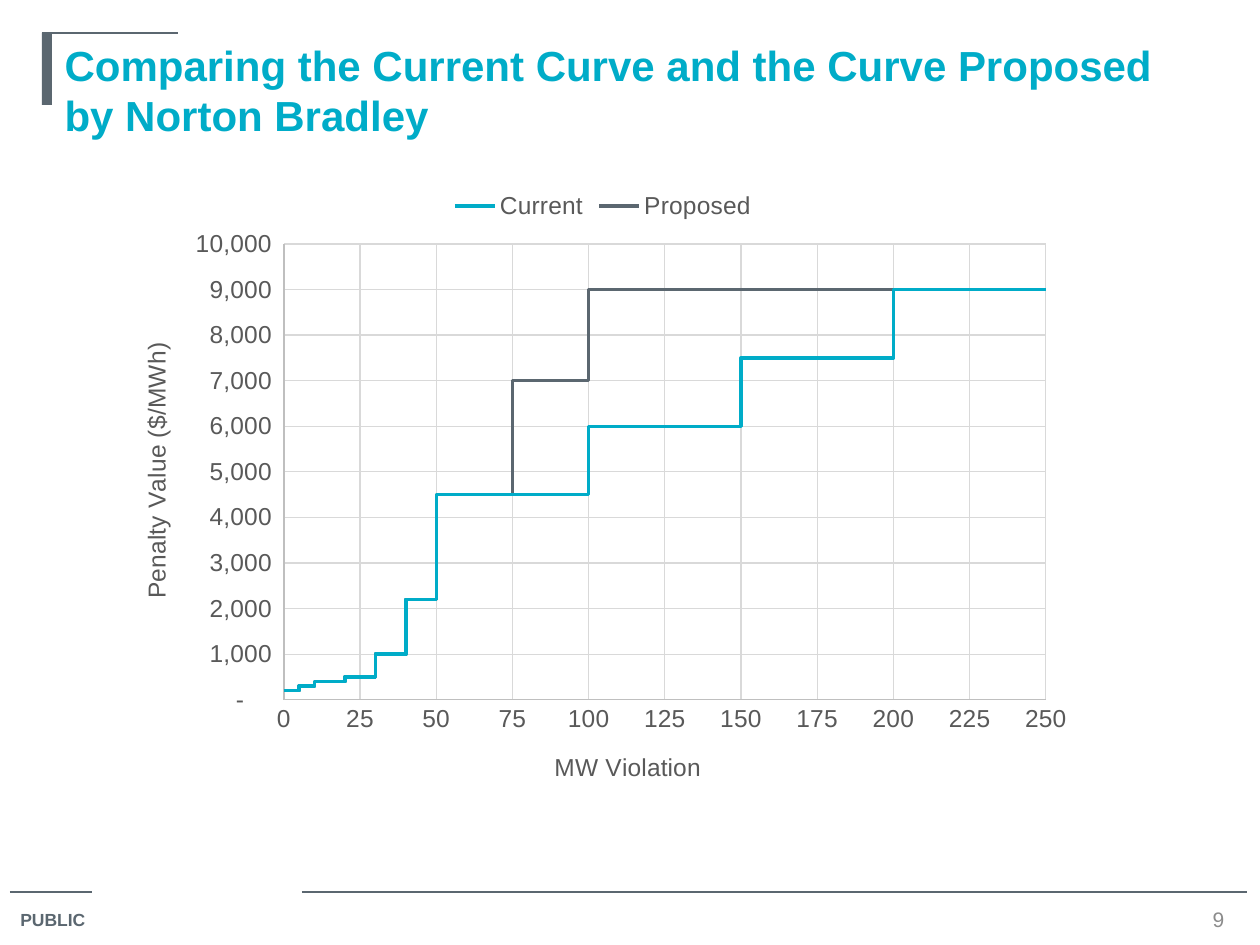
import lxml.etree
import pptx
import pptx.chart.data
import pptx.dml.color
import pptx.enum.chart
import pptx.enum.shapes
import pptx.enum.text
import pptx.oxml
import pptx.oxml.ns
import pptx.util

PX = 914400 / 126
FONT = "Arial"
COLORS = {"teal": "00ACC8", "slate": "5B6770", "number": "8C8C8C",
          "label": "595959", "axis": "BFBFBF", "grid": "D9D9D9"}
# Penalty values in $/MWh, one for each step between two MW violations
MW_BREAKS = [0, 5, 10, 20, 30, 40, 50, 75, 100, 150, 200, 500]
SHARED_STEPS = [200, 300, 400, 500, 1000, 2200, 4500]
CURVES = [
    ("Current", "teal", SHARED_STEPS + [4500, 6000, 7500, 9000]),
    ("Proposed", "slate", SHARED_STEPS + [7000, 9000, 9000, 9000]),
]


def px(n):
    return pptx.util.Emu(round(n * PX))


def rgb(name):
    return pptx.dml.color.RGBColor.from_string(COLORS[name])


def set_font(font, size, color, bold=False):
    font.name, font.size, font.bold = FONT, pptx.util.Pt(size), bold
    font.color.rgb = rgb(color)


def set_line(line, color, width=0.75):
    line.color.rgb = rgb(color)
    line.width = pptx.util.Pt(width)


def add_rule(s, x1, x2, y):
    rule = s.shapes.add_connector(
        pptx.enum.shapes.MSO_CONNECTOR.STRAIGHT, px(x1), px(y), px(x2), px(y))
    set_line(rule.line, "slate")
    lxml.etree.SubElement(rule._element.spPr, pptx.oxml.ns.qn("a:effectLst"))


def add_label(s, box, text, size, color, align, bold=False):
    tf = s.shapes.add_textbox(*map(px, box)).text_frame
    tf.word_wrap = True
    tf.vertical_anchor = pptx.enum.text.MSO_ANCHOR.MIDDLE
    p = tf.paragraphs[0]
    p.text, p.alignment = text, align
    set_font(p.font, size, color, bold)


def add_header(s, x, y, w, h, text):
    # Corner mark
    bar = s.shapes.add_shape(pptx.enum.shapes.MSO_SHAPE.RECTANGLE,
                             px(x), px(y), px(10), px(72))
    bar.shadow.inherit = False
    bar.fill.solid()
    bar.fill.fore_color.rgb = rgb("slate")
    bar.line.fill.background()
    add_rule(s, x, x + 136, y)

    # Title
    title = s.shapes.title
    title.left, title.top, title.width, title.height = map(px, (x + 10, y, w - 10, h))
    tf = title.text_frame
    tf.word_wrap = True
    tf.auto_size = pptx.enum.text.MSO_AUTO_SIZE.NONE
    tf.vertical_anchor = pptx.enum.text.MSO_ANCHOR.TOP
    p = tf.paragraphs[0]
    p.text, p.alignment = text, pptx.enum.text.PP_ALIGN.LEFT
    set_font(p.font, 24, "teal", bold=True)


def add_footer(s, x, y, w, label, number):
    add_rule(s, x, x + 82, y)
    add_rule(s, x + 292, x + w, y)
    add_label(s, (x - 2, y + 10, 97, 35), label, 10, "slate",
              pptx.enum.text.PP_ALIGN.LEFT, bold=True)
    add_label(s, (x + w - 60, y + 13, 63, 29), number, 12, "number",
              pptx.enum.text.PP_ALIGN.CENTER)


def stair_points(penalties):
    for start, end, penalty in zip(MW_BREAKS, MW_BREAKS[1:], penalties):
        yield start, penalty
        yield end, penalty


def set_layout(element, index, chart_size, position, size=None):
    """Place a chart part by px measured within the chart."""
    values = dict(zip("xywh", position + (size or ())))
    fractions = "".join(
        f'<c:{key} val="{value / chart_size[key in "yh"]:.4f}"/>'
        for key, value in values.items())
    target = '<c:layoutTarget val="inner"/>' if size else ""
    layout = pptx.oxml.parse_xml(
        f'<c:layout {pptx.oxml.ns.nsdecls("c")}><c:manualLayout>{target}'
        f'<c:xMode val="edge"/><c:yMode val="edge"/>{fractions}'
        '</c:manualLayout></c:layout>')
    for old in element.findall(pptx.oxml.ns.qn("c:layout")):
        element.remove(old)
    element.insert(index, layout)


def format_axis(axis, title, rotation, top, unit, number_format):
    axis.minimum_scale, axis.maximum_scale, axis.major_unit = 0, top, unit
    axis.has_major_gridlines = True
    set_line(axis.major_gridlines.format.line, "grid")
    set_line(axis.format.line, "axis")
    axis.major_tick_mark = axis.minor_tick_mark = pptx.enum.chart.XL_TICK_MARK.NONE
    axis.tick_labels.number_format = number_format
    axis.tick_labels.number_format_is_linked = False
    set_font(axis.tick_labels.font, 14, "label")

    tf = axis.axis_title.text_frame
    p = tf.paragraphs[0]
    p.text = title
    set_font(p.font, 14, "label")
    tf._txBody.bodyPr.set("rot", str(rotation * 60000))
    tf._txBody.bodyPr.set("vert", "horz")


def add_curve_chart(s, x, y, w, h):
    data = pptx.chart.data.XyChartData()
    for name, _, penalties in CURVES:
        series = data.add_series(name)
        for mw, penalty in stair_points(penalties):
            series.add_data_point(mw, penalty)
    chart = s.shapes.add_chart(
        pptx.enum.chart.XL_CHART_TYPE.XY_SCATTER_LINES_NO_MARKERS,
        px(x), px(y), px(w), px(h), data).chart
    set_font(chart.font, 14, "label")
    chart.has_title = False

    # Legend
    chart.has_legend = True
    chart.legend.position = pptx.enum.chart.XL_LEGEND_POSITION.TOP
    chart.legend.include_in_layout = False
    set_font(chart.legend.font, 14, "label")

    # Curves
    plot = chart.plots[0]
    plot.vary_by_categories = False
    for series, (_, color, _) in zip(plot.series, CURVES):
        series.smooth = False
        series.marker.style = pptx.enum.chart.XL_MARKER_STYLE.NONE
        set_line(series.format.line, color, 2)

    # Axes
    mw_axis, penalty_axis = chart.category_axis, chart.value_axis
    format_axis(mw_axis, "MW Violation", 0, 250, 25, "General")
    format_axis(penalty_axis, "Penalty Value ($/MWh)", -90, 10000, 1000,
                '_(* #,##0_);_(* \\(#,##0\\);_(* "-"??_);_(@_)')

    # Places within the chart
    set_layout(mw_axis.axis_title._element, 1, (w, h), (456, 569))
    set_layout(penalty_axis.axis_title._element, 1, (w, h), (42, 160))
    set_layout(chart._chartSpace.chart.plotArea, 0, (w, h), (190, 66), (762, 456))


def main():
    prs = pptx.Presentation()
    prs.slide_width, prs.slide_height = px(1260), px(945)
    s = prs.slides.add_slide(prs.slide_layouts[5])
    add_footer(s, 10, 892, 1237, "PUBLIC", "9")
    add_header(s, 42, 33, 1176, 158,
               "Comparing the Current Curve and the Curve Proposed by Norton Bradley")
    add_curve_chart(s, 94, 178, 1018, 650)
    prs.save("out.pptx")


if __name__ == "__main__":
    main()
